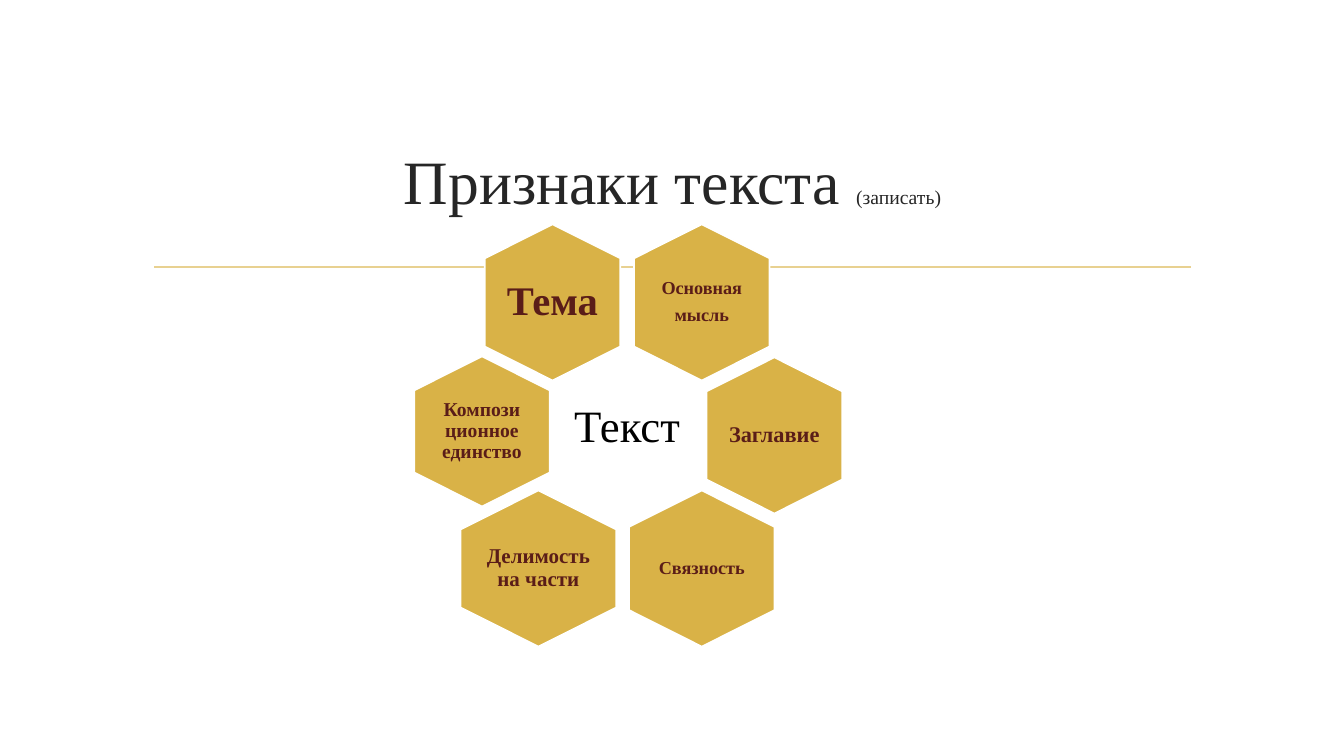
"""Build a slide with a ring of hexagons naming the features of a text."""
from dataclasses import dataclass

from lxml import etree
from pptx import Presentation
from pptx.dml.color import RGBColor
from pptx.enum.shapes import MSO_CONNECTOR, MSO_SHAPE
from pptx.enum.text import MSO_ANCHOR, MSO_AUTO_SIZE, PP_ALIGN
from pptx.oxml.ns import qn
from pptx.shapes.shapetree import GroupShapes, SlideShapes
from pptx.slide import Slide
from pptx.util import Inches, Pt

HEXAGON = MSO_SHAPE.HEXAGON
STRAIGHT = MSO_CONNECTOR.STRAIGHT
MIDDLE = MSO_ANCHOR.MIDDLE
CENTER = PP_ALIGN.CENTER
NO_FIT = MSO_AUTO_SIZE.NONE
TITLE_ONLY = 5


@dataclass(frozen=True)
class Theme:
    font: str = "Times New Roman"
    title_color: RGBColor = RGBColor(0x26, 0x26, 0x26)
    center_color: RGBColor = RGBColor(0, 0, 0)
    label_color: RGBColor = RGBColor(0x5A, 0x1D, 0x18)
    fill: RGBColor = RGBColor(0xD9, 0xB2, 0x47)
    outline: RGBColor = RGBColor(0xFF, 0xFF, 0xFF)
    rule: RGBColor = RGBColor(0xE8, 0xD1, 0x91)
    title_size: int = 44
    note_size: int = 14
    center_size: int = 32
    line_width: float = 1.25
    line_spacing: float = 0.9
    space_after: float = 0.4


@dataclass(frozen=True)
class Label:
    lines: tuple[str, ...]
    cx: float
    cy: float
    width: float
    height: float
    size: int
    inset: float = 0
    color: RGBColor = Theme.label_color
    bold: bool = True


@dataclass(frozen=True)
class Feature:
    label: Label
    length: float = 1.55
    breadth: float = 1.35


THEME = Theme()
CENTER_LABEL = Label(("Текст",), 6.22, 4.25, 1.74, 0.93, THEME.center_size,
                     0.13, THEME.center_color, False)
FEATURES = (
    Feature(Label(("Основная", "мысль"), 6.96, 3, 0.93, 1.07, 13, 0.05)),
    Feature(Label(("Тема",), 5.48, 3, 0.93, 1.07, 29)),
    Feature(Label(("Композиционное единство",), 4.78, 4.28, 0.92, 1.02, 14, 0.06), 1.49),
    Feature(Label(("Заглавие",), 7.68, 4.32, 0.93, 1.07, 16)),
    Feature(Label(("Связность",), 6.96, 5.64, 0.99, 1.05, 13, 0.05), breadth=1.45),
    Feature(Label(("Делимость на части",), 5.34, 5.64, 1.03, 1.04, 15), breadth=1.55),
)


def add_title(s: Slide) -> None:
    title = s.shapes.title
    title.left, title.top = Inches(1.42), Inches(1.07)
    title.width, title.height = Inches(10.5), Inches(1.43)
    tf = title.text_frame
    tf.auto_size = NO_FIT
    tf.vertical_anchor = MIDDLE
    p = tf.paragraphs[0]
    p.alignment = CENTER
    p.font.name = THEME.font
    p.font.color.rgb = THEME.title_color
    for text, size in (("Признаки текста ", THEME.title_size),
                       ("(записать)", THEME.note_size)):
        r = p.add_run()
        r.text = text
        r.font.size = Pt(size)


def add_rule(shapes: SlideShapes) -> None:
    y = Inches(2.65)
    rule = shapes.add_connector(STRAIGHT, Inches(1.53), y, Inches(11.81), y)
    rule.line.color.rgb = THEME.rule
    rule.line.width = Pt(THEME.line_width)
    etree.SubElement(rule._element.spPr, qn("a:effectLst"))


def add_hexagon(shapes: GroupShapes, feature: Feature) -> None:
    label = feature.label
    sp = shapes.add_shape(
        HEXAGON, Inches(label.cx - feature.length / 2), Inches(label.cy - feature.breadth / 2),
        Inches(feature.length), Inches(feature.breadth))
    sp.rotation = 90
    sp.adjustments[0] = 0.25
    sp.adjustments[1] = 1.15
    sp.shadow.inherit = False
    sp.fill.solid()
    sp.fill.fore_color.rgb = THEME.fill
    sp.line.color.rgb = THEME.outline
    sp.line.width = Pt(THEME.line_width)


def add_label(shapes: GroupShapes, label: Label) -> None:
    sp = shapes.add_textbox(
        Inches(label.cx - label.width / 2), Inches(label.cy - label.height / 2),
        Inches(label.width), Inches(label.height))
    tf = sp.text_frame
    tf.word_wrap = True
    tf.auto_size = NO_FIT
    tf.vertical_anchor = MIDDLE
    tf.margin_left = tf.margin_right = Inches(label.inset)
    tf.margin_top = tf.margin_bottom = Inches(label.inset)
    tf.text = "\n".join(label.lines)
    for p in tf.paragraphs:
        p.alignment = CENTER
        p.line_spacing = THEME.line_spacing
        p.space_after = Pt(label.size * THEME.space_after)
        p.font.name = THEME.font
        p.font.size = Pt(label.size)
        p.font.bold = label.bold
        p.font.color.rgb = label.color


def main() -> None:
    prs = Presentation()
    prs.slide_width, prs.slide_height = Inches(13.33), Inches(7.5)
    s = prs.slides.add_slide(prs.slide_layouts[TITLE_ONLY])
    add_title(s)
    add_rule(s.shapes)
    ring = s.shapes.add_group_shape().shapes
    for feature in FEATURES:
        add_hexagon(ring, feature)
        add_label(ring, feature.label)
    add_label(ring, CENTER_LABEL)
    prs.save("out.pptx")


if __name__ == "__main__":
    main()
